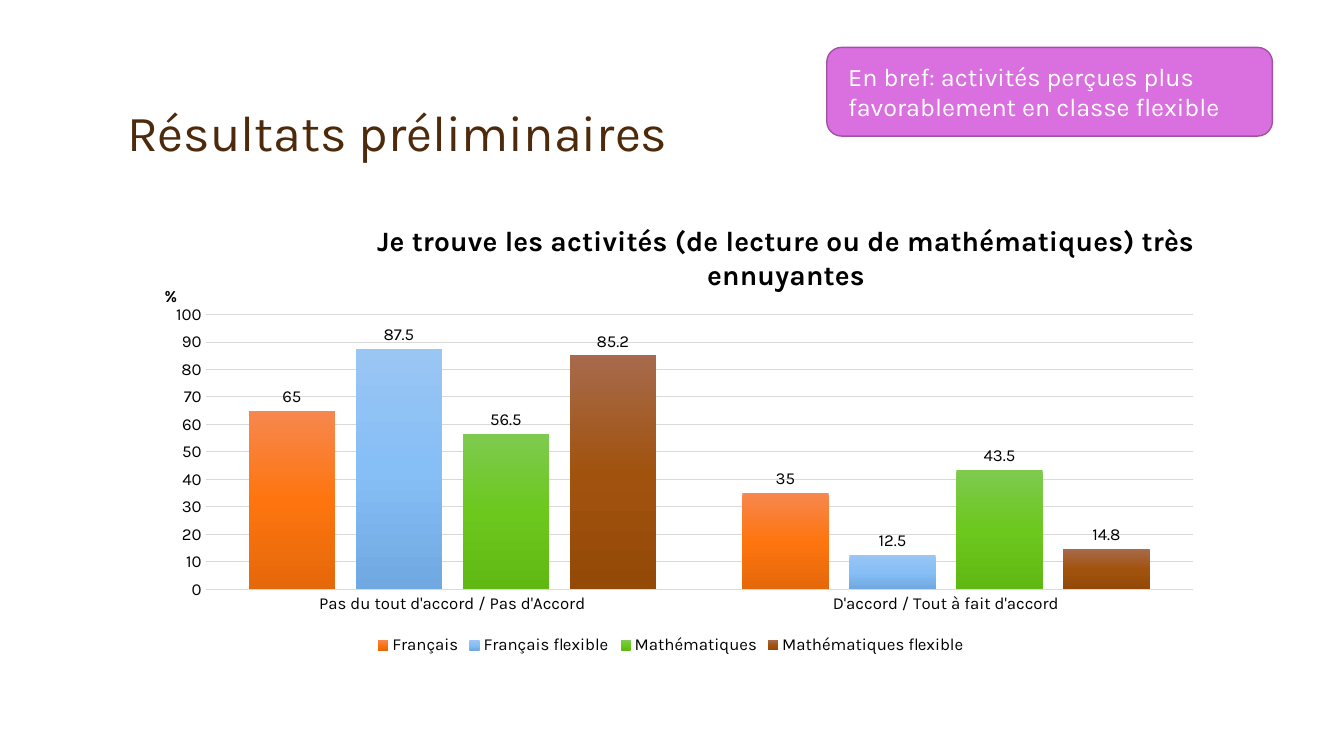
from lxml import etree
from pptx import Presentation
from pptx.chart.data import CategoryChartData
from pptx.dml.color import RGBColor
from pptx.enum.chart import XL_CHART_TYPE as ChartType, XL_LABEL_POSITION as LabelPosition
from pptx.enum.chart import XL_LEGEND_POSITION as LegendPosition, XL_TICK_MARK as TickMark
from pptx.enum.shapes import MSO_SHAPE as Shape
from pptx.enum.text import MSO_ANCHOR as Anchor, PP_ALIGN as Align
from pptx.oxml import parse_xml
from pptx.oxml.ns import nsdecls, qn
from pptx.util import Inches, Pt

FONT = "Karla"
COLORS = {"title": "4D2A0B", "text": "000000", "grid": "D9D9D9",
          "callout": "DA6FDF", "callout_line": "A152A5", "callout_text": "FFFFFF"}
CATEGORIES = ["Pas du tout d'accord / Pas d'Accord", "D'accord / Tout à fait d'accord"]
SERIES = [
    ("Français", (65, 35), ("F7874E", "FE750F", "E5680A")),
    ("Français flexible", (87.5, 12.5), ("9AC6F4", "86BEF6", "70A9E1")),
    ("Mathématiques", (56.5, 43.5), ("7ECA50", "6CC81D", "60B813")),
    ("Mathématiques flexible", (85.2, 14.8), ("A76A4C", "A1530E", "954907")),
]


def rgb(name):
    """Return a named colour."""
    return RGBColor.from_string(COLORS[name])


def style_font(font, size, color="text", bold=False):
    """Set family, size, colour and weight of a font."""
    font.name, font.size, font.bold = FONT, Pt(size), bold
    font.color.rgb = rgb(color)


def style_line(line, color="grid", width=0.75):
    """Set colour and width of a line."""
    line.color.rgb = rgb(color)
    line.width = Pt(width)


def fill_gradient(series, colors):
    """Fill the columns of a series with a vertical gradient."""
    stops = "".join(f'<a:gs pos="{index * 50000}"><a:srgbClr val="{color}"/></a:gs>'
                    for index, color in enumerate(colors))
    series.format.line.fill.background()
    properties = series._element.get_or_add_spPr()
    properties.insert(0, parse_xml(f'<a:gradFill {nsdecls("a")}><a:gsLst>{stops}</a:gsLst>'
                                   '<a:lin ang="5400000" scaled="0"/></a:gradFill>'))


def set_layout(element, **fractions):
    """Place a chart part at fractions of the chart area."""
    layout = element.get_or_add_layout() if hasattr(element, "get_or_add_layout") else element.find(qn("c:layout"))
    if layout is None:
        layout = etree.Element(qn("c:layout"))
        element.insert(0, layout)
    for child in list(layout):
        layout.remove(child)
    manual = etree.SubElement(layout, qn("c:manualLayout"))
    if "w" in fractions:
        etree.SubElement(manual, qn("c:layoutTarget")).set("val", "inner")
    for name in ("xMode", "yMode"):
        etree.SubElement(manual, qn(f"c:{name}")).set("val", "edge")
    for name, value in fractions.items():
        etree.SubElement(manual, qn(f"c:{name}")).set("val", str(value))


def set_chart_title(title, text, size, x, y):
    """Write a chart or axis title and place it."""
    title.text_frame.text = text
    style_font(title.text_frame.paragraphs[0].runs[0].font, size, bold=True)
    set_layout(title._element, x=x, y=y)


def add_title(slide, left, top, width, height):
    """Write the slide title."""
    title = slide.shapes.title
    title.left, title.top, title.width, title.height = map(Inches, (left, top, width, height))
    title.text_frame.text = "Résultats préliminaires"
    title.text_frame.vertical_anchor = Anchor.BOTTOM
    paragraph = title.text_frame.paragraphs[0]
    paragraph.alignment = Align.LEFT
    paragraph.line_spacing = 0.9
    style_font(paragraph.runs[0].font, 36, "title")


def add_results_chart(slide, left, top, width, height):
    """Draw the clustered columns of answers by class type."""
    data = CategoryChartData()
    data.categories = CATEGORIES
    for name, values, _ in SERIES:
        data.add_series(name, values)
    chart = slide.shapes.add_chart(ChartType.COLUMN_CLUSTERED, *map(Inches, (left, top, width, height)), data).chart
    style_font(chart.font, 12)
    set_chart_title(chart.chart_title, "Je trouve les activités (de lecture ou de mathématiques) très ennuyantes",
                    20, 0.23, 0.05)
    chart.chart_title.include_in_layout = False

    category_axis, value_axis = chart.category_axis, chart.value_axis
    for axis in (category_axis, value_axis):
        axis.major_tick_mark = axis.minor_tick_mark = TickMark.NONE
        style_font(axis.tick_labels.font, 12)
    style_line(category_axis.format.line)
    value_axis.minimum_scale, value_axis.maximum_scale, value_axis.major_unit = 0, 100, 10
    value_axis.format.line.fill.background()
    style_line(value_axis.major_gridlines.format.line)
    set_chart_title(value_axis.axis_title, "%", 12, 0.04, 0.19)
    value_axis.axis_title.text_frame._txBody.bodyPr.set("rot", "0")

    chart.has_legend = True
    chart.legend.position = LegendPosition.BOTTOM
    chart.legend.include_in_layout = False
    style_font(chart.legend.font, 12)

    plot = chart.plots[0]
    plot.gap_width, plot.overlap, plot.vary_by_categories = 100, -24, False
    for series, (_, _, colors) in zip(plot.series, SERIES):
        fill_gradient(series, colors)
        labels = series.data_labels
        labels.show_value = True
        labels.position = LabelPosition.OUTSIDE_END
        style_font(labels.font, 12)
    set_layout(chart._chartSpace.chart.plotArea, x=0.08, y=0.26, w=0.89, h=0.59)


def add_callout(slide, left, top, width, height):
    """Add the rounded box with the key message."""
    callout = slide.shapes.add_shape(Shape.ROUNDED_RECTANGLE, *map(Inches, (left, top, width, height)))
    callout.shadow.inherit = False
    callout.fill.solid()
    callout.fill.fore_color.rgb = rgb("callout")
    style_line(callout.line, "callout_line", 1)
    frame = callout.text_frame
    frame.word_wrap = True
    frame.vertical_anchor = Anchor.MIDDLE
    frame.margin_left = frame.margin_right = Inches(0.17)
    frame.text = "En bref: activités perçues plus favorablement en classe flexible"
    frame.paragraphs[0].alignment = Align.LEFT
    style_font(frame.paragraphs[0].runs[0].font, 18, "callout_text")


def main():
    """Build and save the slide."""
    presentation = Presentation()
    presentation.slide_width, presentation.slide_height = Inches(13.33), Inches(7.5)
    slide = presentation.slides.add_slide(presentation.slide_layouts[5])
    add_title(slide, 1.16, 0.33, 11, 1.33)
    add_results_chart(slide, 1.16, 1.92, 11, 4.62)
    add_callout(slide, 8.2, 0.47, 4.42, 0.88)
    presentation.save("out.pptx")


if __name__ == "__main__":
    main()
